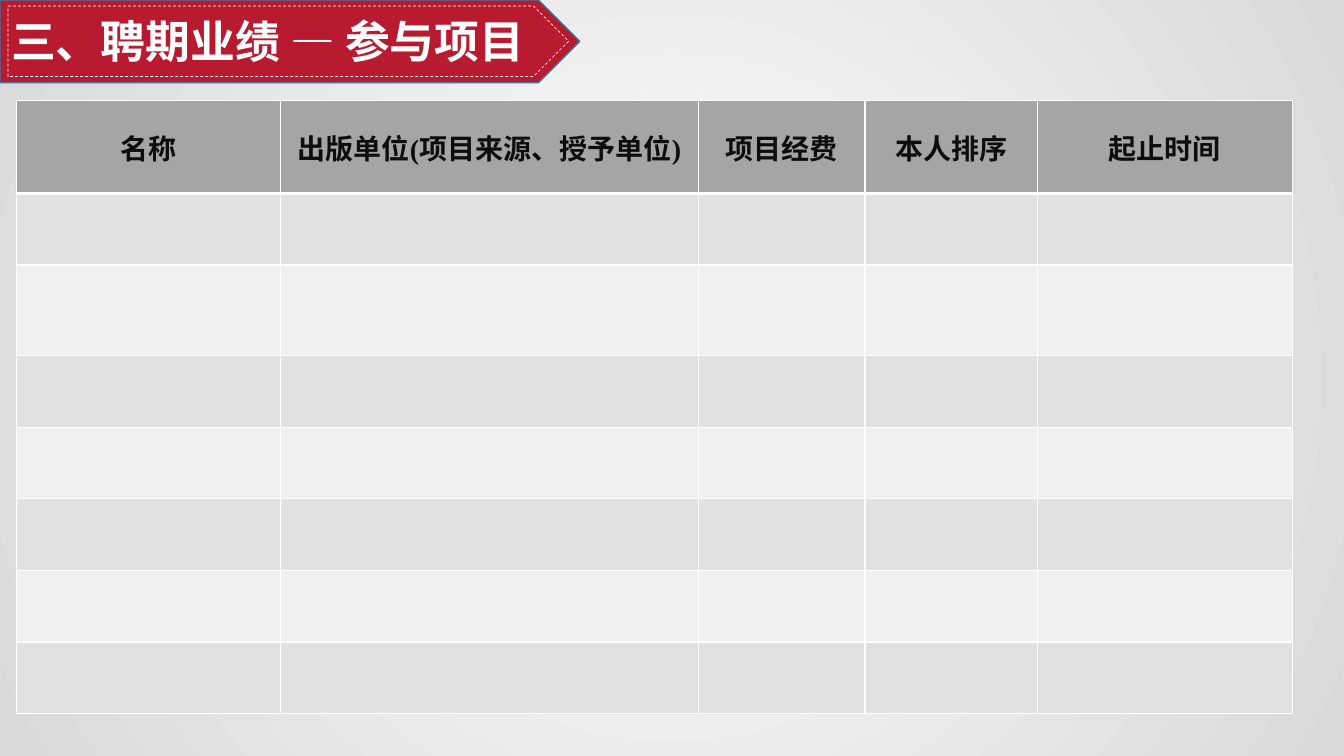
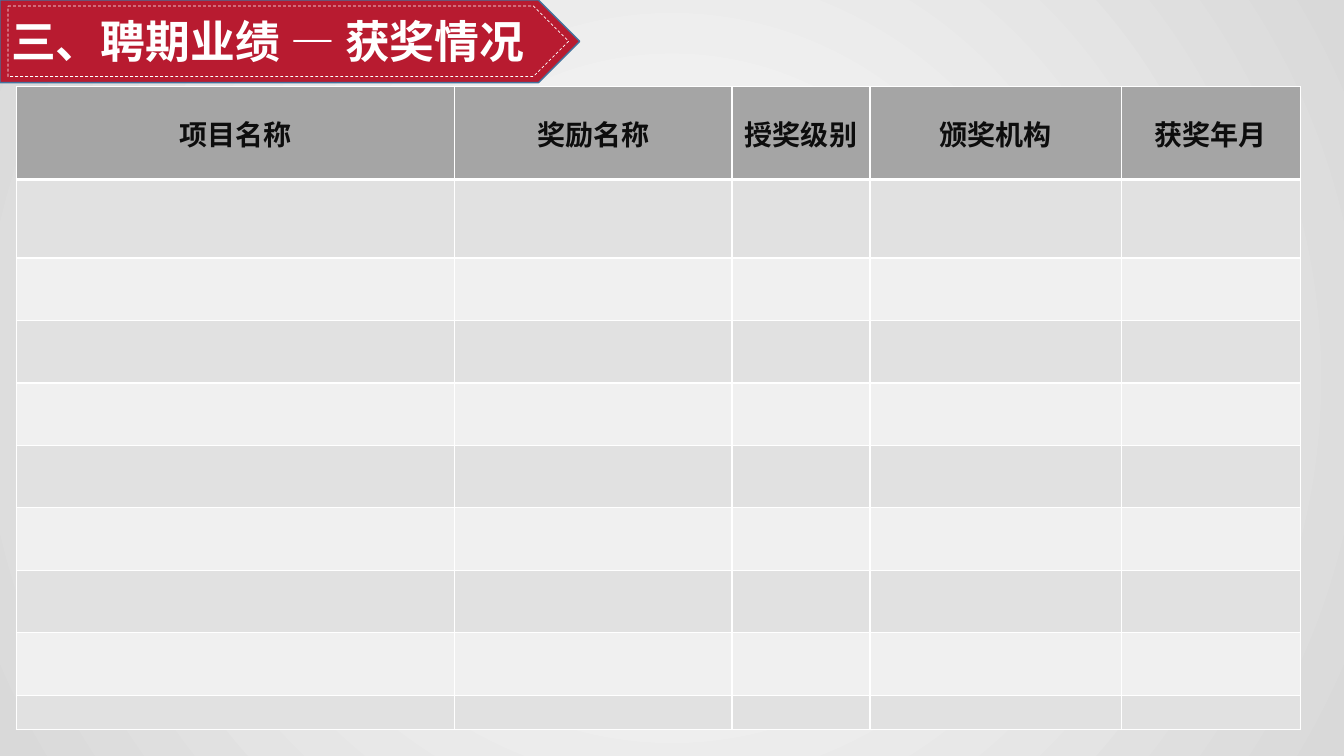
from dataclasses import dataclass

from lxml.etree import SubElement
from pptx import Presentation
from pptx.dml.color import RGBColor
from pptx.enum.dml import MSO_LINE
from pptx.enum.shapes import MSO_SHAPE
from pptx.enum.text import MSO_ANCHOR, MSO_AUTO_SIZE, PP_ALIGN
from pptx.oxml import parse_xml
from pptx.oxml.ns import nsdecls, qn
from pptx.util import Emu, Pt

PX = 9144


@dataclass(frozen=True)
class Theme:
    glow: str = "FFFFFF"
    edge: str = "D9D9D9"
    banner: str = "B81B30"
    banner_line: str = "43739E"
    white: str = "FFFFFF"
    ink: str = "0D0D0D"
    header: str = "A5A5A5"
    bands: tuple = ("E1E1E1", "F0F0F0")
    heading_font: str = "Noto Sans CJK SC"
    table_font: str = "Times New Roman"
    title_size: int = 32
    header_size: int = 20
    thin: int = 1
    thick: int = 3
    dash: float = 0.5


def px(*lengths):
    return [Emu(length * PX) for length in lengths]


class Deck:
    def __init__(self, theme):
        self.theme = theme
        self.presentation = Presentation()
        width, height = px(1333, 750)
        self.presentation.slide_width = width
        self.presentation.slide_height = height
        self.layout = self.presentation.slide_layouts[5]
        self.page = None
        self.paint_background()
        self.prepare_layout()

    def paint_background(self):
        master = self.presentation.slide_master
        master.background.fill.solid()
        properties = master.element.find(".//" + qn("p:bgPr"))
        stops = "".join(
            f'<a:gs pos="{position}"><a:srgbClr val="{color}"/></a:gs>'
            for position, color in ((0, self.theme.glow), (100000, self.theme.edge))
        )
        gradient = parse_xml(
            f'<a:gradFill {nsdecls("a")} rotWithShape="1"><a:gsLst>{stops}</a:gsLst>'
            '<a:path path="circle"><a:fillToRect l="50000" t="50000" r="50000" b="50000"/>'
            "</a:path></a:gradFill>"
        )
        properties.replace(properties.find(qn("a:solidFill")), gradient)

    def prepare_layout(self):
        title, *footers = self.layout.placeholders
        for footer in footers:
            footer.element.getparent().remove(footer.element)
        title.left, title.top, title.width, title.height = px(1, 9, 544, 64)

    def start_page(self, title):
        self.page = self.presentation.slides.add_slide(self.layout)
        if len(self.presentation.slides) == 1:
            self.share_banner()
        self.title(title)

    def share_banner(self):
        theme = self.theme
        plate = self.pentagon(0, 0, 575, 82, theme.banner_line, theme.thin, theme.banner)
        stitching = self.pentagon(8, 6, 556, 70, theme.white, theme.dash)
        stitching.line.dash_style = MSO_LINE.DASH
        tree = self.layout.shapes.element
        for index, shape in enumerate((plate, stitching), start=2):
            tree.insert(index, shape.element)

    def pentagon(self, left, top, width, height, line, weight, fill=None):
        shape = self.page.shapes.add_shape(MSO_SHAPE.PENTAGON, *px(left, top, width, height))
        shape.shadow.inherit = False
        if fill:
            shape.fill.solid()
            shape.fill.fore_color.rgb = RGBColor.from_string(fill)
        else:
            shape.fill.background()
        shape.line.color.rgb = RGBColor.from_string(line)
        shape.line.width = Pt(weight)
        return shape

    def span(self, para, text, size, color, font):
        span = para.add_run()
        span.text = text
        span.font.size = Pt(size)
        span.font.bold = True
        span.font.color.rgb = RGBColor.from_string(color)
        span.font.name = font
        east_asian = SubElement(span._r.get_or_add_rPr(), qn("a:ea"))
        east_asian.set("typeface", self.theme.heading_font)

    def title(self, text):
        theme = self.theme
        frame = self.page.shapes.title.text_frame
        frame.word_wrap = False
        frame.auto_size = MSO_AUTO_SIZE.SHAPE_TO_FIT_TEXT
        frame.vertical_anchor = MSO_ANCHOR.TOP
        para = frame.paragraphs[0]
        para.alignment = PP_ALIGN.LEFT
        self.span(para, text, theme.title_size, theme.white, theme.heading_font)

    def table(self, top, columns, rows, headings, inset):
        theme = self.theme
        frame = self.page.shapes.add_table(
            len(rows), len(columns), *px(16, top, sum(columns), sum(rows))
        )
        table = frame.table
        for column, width in zip(table.columns, px(*columns)):
            column.width = width
        for row, height in zip(table.rows, px(*rows)):
            row.height = height
        for number, row in enumerate(table.rows):
            fill = theme.bands[(number - 1) % 2] if number else theme.header
            above = theme.thick if number == 1 else theme.thin
            below = theme.thin if number else theme.thick
            for cell in row.cells:
                self.cell(cell, fill, above, below, inset)
        for cell, heading in zip(table.rows[0].cells, headings):
            para = cell.text_frame.paragraphs[0]
            para.alignment = PP_ALIGN.CENTER
            self.span(para, heading, theme.header_size, theme.ink, theme.table_font)

    def cell(self, cell, fill, above, below, inset):
        theme = self.theme
        cell.vertical_anchor = MSO_ANCHOR.MIDDLE
        side, end = px(*inset)
        cell.margin_left = cell.margin_right = side
        cell.margin_top = cell.margin_bottom = end
        cell.fill.solid()
        cell.fill.fore_color.rgb = RGBColor.from_string(fill)
        properties = cell._tc.get_or_add_tcPr()
        weights = {"lnL": theme.thin, "lnR": theme.thin, "lnT": above, "lnB": below}
        for index, (edge, weight) in enumerate(weights.items()):
            border = parse_xml(
                f'<a:{edge} {nsdecls("a")} w="{Pt(weight)}"><a:solidFill>'
                f'<a:srgbClr val="{theme.white}"/></a:solidFill></a:{edge}>'
            )
            properties.insert(index, border)


def main():
    deck = Deck(Theme())

    deck.start_page("三、聘期业绩 — 参与项目")
    deck.table(
        top=100,
        columns=[262, 415, 165, 171, 253],
        rows=[92, 71, 90] + [71] * 5,
        headings=["名称", "出版单位(项目来源、授予单位)", "项目经费", "本人排序", "起止时间"],
        inset=(10, 5),
    )

    deck.start_page("三、聘期业绩 — 获奖情况")
    deck.table(
        top=86,
        columns=[435, 275, 137, 249, 178],
        rows=[92, 78] + [62] * 7 + [34],
        headings=["项目名称", "奖励名称", "授奖级别", "颁奖机构", "获奖年月"],
        inset=(7, 0),
    )

    deck.presentation.save("out.pptx")


if __name__ == "__main__":
    main()
